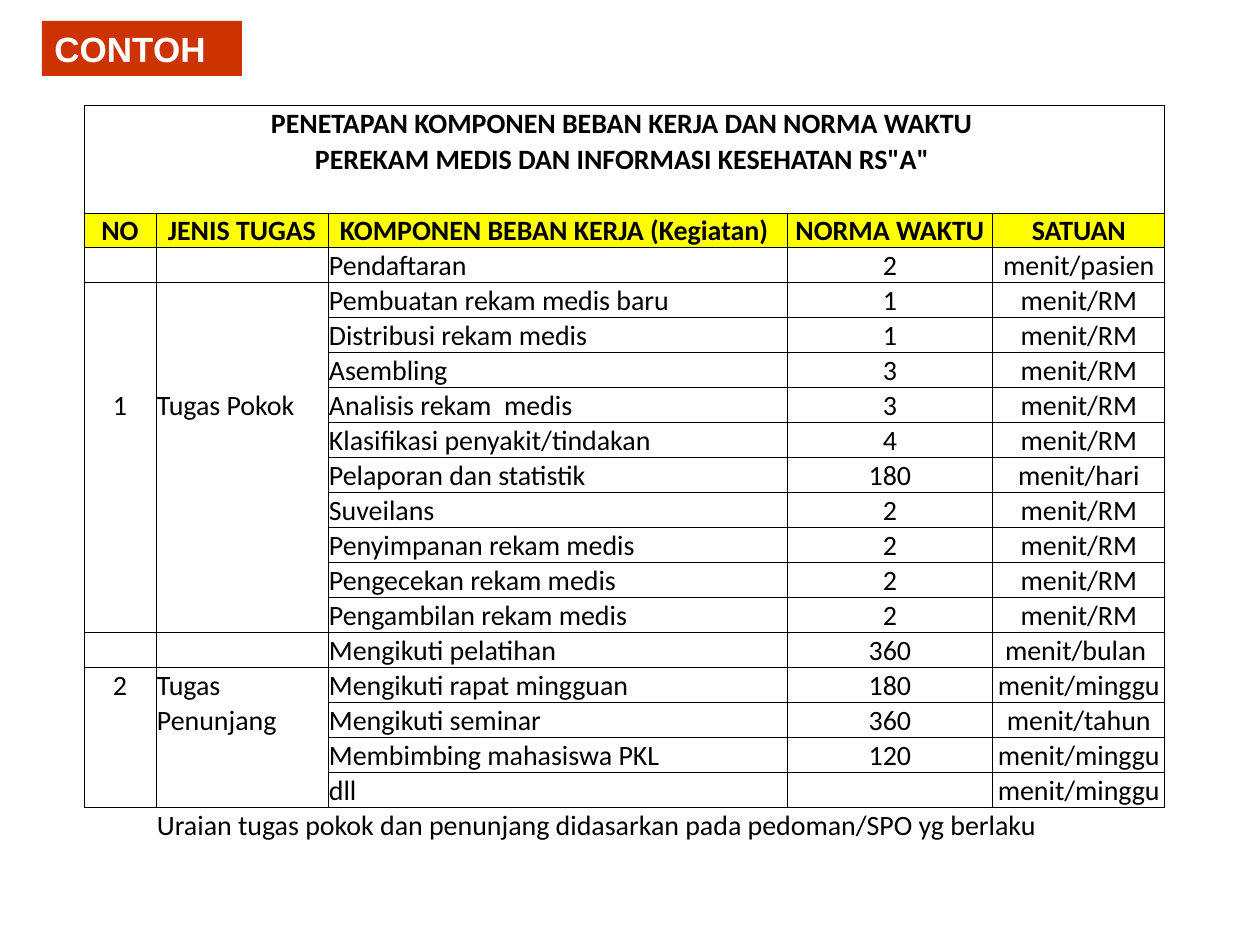
"""Build a slide with a table of workload components and time norms."""

from dataclasses import dataclass
from typing import NamedTuple

from lxml.etree import SubElement
from pptx import Presentation
from pptx.dml.color import RGBColor
from pptx.enum.shapes import MSO_SHAPE as Shape
from pptx.enum.text import MSO_ANCHOR as Anchor, MSO_AUTO_SIZE as AutoSize, PP_ALIGN as Align
from pptx.oxml.ns import qn
from pptx.util import Emu, Pt

COLORS = {"black": "000000", "white": "FFFFFF", "red": "CC3300", "yellow": "FFFF00"}
NO_STYLE = "{2D5ABB26-0587-4C30-8999-92F81FD0307C}"
COLUMN_WIDTHS = [72, 172, 459, 206, 172]
TITLE_HEIGHT, ROW_HEIGHT = 36, 35
TITLE_ROWS, HEADER_ROW, FIRST_TASK_ROW = 3, 3, 4
HEADERS = ["NO", "JENIS TUGAS", "KOMPONEN BEBAN KERJA (Kegiatan) ", "NORMA WAKTU", "SATUAN"]


class Task(NamedTuple):
    name: str
    norm: str
    unit: str


class Title(NamedTuple):
    text: str
    last_column: int
    indent: int


@dataclass
class Group:
    number: str
    label_lines: list[str]
    label_offset: int
    tasks: list[Task]


@dataclass
class Box:
    top: int
    left: int
    bottom: int
    right: int


TITLES = [
    Title("PENETAPAN KOMPONEN BEBAN KERJA DAN NORMA WAKTU", 4, 115),
    Title('PEREKAM MEDIS DAN INFORMASI KESEHATAN RS"A"', 3, 159),
]
GROUPS = [
    Group("1", ["Tugas Pokok"], 4, [
        Task("Pendaftaran", "2", "menit/pasien"),
        Task("Pembuatan rekam medis baru", "1", "menit/RM"),
        Task("Distribusi rekam medis", "1", "menit/RM"),
        Task("Asembling", "3", "menit/RM"),
        Task("Analisis rekam  medis", "3", "menit/RM"),
        Task("Klasifikasi penyakit/tindakan", "4", "menit/RM"),
        Task("Pelaporan dan statistik", "180", "menit/hari"),
        Task("Suveilans", "2", "menit/RM"),
        Task("Penyimpanan rekam medis", "2", "menit/RM"),
        Task("Pengecekan rekam medis", "2", "menit/RM"),
        Task("Pengambilan rekam medis", "2", "menit/RM"),
    ]),
    Group("2", ["Tugas", "Penunjang"], 1, [
        Task("Mengikuti pelatihan", "360", "menit/bulan "),
        Task("Mengikuti rapat mingguan", "180", "menit/minggu"),
        Task("Mengikuti seminar", "360", "menit/tahun"),
        Task("Membimbing mahasiswa PKL", "120", "menit/minggu"),
        Task("dll", "", "menit/minggu"),
    ]),
]
NOTE = "Uraian tugas pokok dan penunjang didasarkan pada pedoman/SPO yg berlaku"


def px(length: int) -> Emu:
    """Turn pixels into EMU."""
    return Emu(round(length * 914400 / 126))


def color(name: str) -> RGBColor:
    """Look up a named color."""
    return RGBColor.from_string(COLORS[name])


def write_text(frame, text: str, *, size: int = 16, font: str = "Calibri", bold: bool = False,
               fill: str = "black", align=Align.LEFT) -> None:
    """Write one formatted paragraph into a text frame."""
    paragraph = frame.paragraphs[0]
    paragraph.alignment = align
    if not text:
        SubElement(paragraph._p, qn("a:endParaRPr"), sz=str(size * 100))
        return
    run = paragraph.add_run()
    run.text = text
    run.font.size, run.font.name, run.font.bold = Pt(size), font, bold
    run.font.color.rgb = color(fill)


def add_badge(slide) -> None:
    """Draw the label at the top left."""
    shape = slide.shapes.add_shape(Shape.RECTANGLE, px(42), px(21), px(200), px(55))
    shape.shadow.inherit = False
    shape.fill.solid()
    shape.fill.fore_color.rgb = color("red")
    shape.line.fill.background()
    frame = shape.text_frame
    frame.word_wrap, frame.vertical_anchor = True, Anchor.TOP
    frame.auto_size = AutoSize.SHAPE_TO_FIT_TEXT
    write_text(frame, "CONTOH", size=20, font="Arial", bold=True, fill="white")


def outline(table, box: Box) -> None:
    """Draw a thin border around a block of cells."""
    for row in range(box.top, box.bottom + 1):
        for column in range(box.left, box.right + 1):
            cell = table.cell(row, column)
            last = column + cell.span_width - 1 if cell.is_merge_origin else column
            edges = {"L": column == box.left, "R": last == box.right,
                     "T": row == box.top, "B": row == box.bottom}
            properties = cell._tc.get_or_add_tcPr()
            for side in (side for side, drawn in edges.items() if drawn):
                line = SubElement(properties, qn(f"a:ln{side}"), w=str(Pt(0.5)))
                solid = SubElement(line, qn("a:solidFill"))
                SubElement(solid, qn("a:srgbClr"), val=COLORS["black"])


def table_texts() -> dict[tuple[int, int], str]:
    """Map cell positions to their texts."""
    texts = {(row, 1): title.text for row, title in enumerate(TITLES)}
    texts |= {(HEADER_ROW, column): text for column, text in enumerate(HEADERS)}
    row = FIRST_TASK_ROW
    for group in GROUPS:
        label_row = row + group.label_offset
        texts[label_row, 0] = group.number
        texts |= {(label_row + index, 1): line for index, line in enumerate(group.label_lines)}
        for task in group.tasks:
            texts |= {(row, column): text for column, text in enumerate(task, start=2)}
            row += 1
    texts[row, 1] = NOTE
    return texts


def table_boxes() -> list[Box]:
    """List the outlined blocks of the table."""
    last = len(COLUMN_WIDTHS) - 1
    boxes = [Box(0, 0, TITLE_ROWS - 1, last)]
    boxes += [Box(HEADER_ROW, column, HEADER_ROW, column) for column in range(last + 1)]
    top = FIRST_TASK_ROW
    for group in GROUPS:
        bottom = top + len(group.tasks) - 1
        boxes += [Box(top, column, bottom, column) for column in (0, 1)]
        boxes += [Box(row, column, row, column)
                  for row in range(top, bottom + 1) for column in range(2, last + 1)]
        top = bottom + 1
    return boxes


def add_workload_table(slide) -> None:
    """Draw the table of tasks, time norms and units."""
    note_row = FIRST_TASK_ROW + sum(len(group.tasks) for group in GROUPS)
    heights = [TITLE_HEIGHT] * TITLE_ROWS + [ROW_HEIGHT] * (note_row + 1 - TITLE_ROWS)
    table = slide.shapes.add_table(len(heights), len(COLUMN_WIDTHS), px(84), px(105),
                                   px(sum(COLUMN_WIDTHS)), px(sum(heights))).table
    table.first_row = table.horz_banding = False
    table._tbl.tblPr.find(qn("a:tableStyleId")).text = NO_STYLE
    for column, width in zip(table.columns, COLUMN_WIDTHS):
        column.width = px(width)
    for row, height in zip(table.rows, heights):
        row.height = px(height)
    for row, title in enumerate(TITLES):
        table.cell(row, 1).merge(table.cell(row, title.last_column))
    table.cell(note_row, 1).merge(table.cell(note_row, 4))
    for box in table_boxes():
        outline(table, box)

    texts = table_texts()
    for row in range(len(heights)):
        for column in range(len(COLUMN_WIDTHS)):
            cell = table.cell(row, column)
            cell.vertical_anchor = Anchor.BOTTOM
            cell.margin_left = cell.margin_right = cell.margin_top = px(1)
            cell.margin_bottom = 0
            centered = row == HEADER_ROW or column in (0, 3, 4)
            write_text(cell.text_frame, texts.get((row, column), ""), bold=row <= HEADER_ROW,
                       align=Align.CENTER if centered else Align.LEFT)
            if row == HEADER_ROW:
                cell.fill.solid()
                cell.fill.fore_color.rgb = color("yellow")
            else:
                cell.fill.background()
    for row, title in enumerate(TITLES):
        table.cell(row, 1).margin_left = px(title.indent)


def main() -> None:
    """Build and save the presentation."""
    presentation = Presentation()
    presentation.slide_width, presentation.slide_height = px(1260), px(945)
    slide = presentation.slides.add_slide(presentation.slide_layouts[6])
    add_badge(slide)
    add_workload_table(slide)
    presentation.save("out.pptx")


if __name__ == "__main__":
    main()
